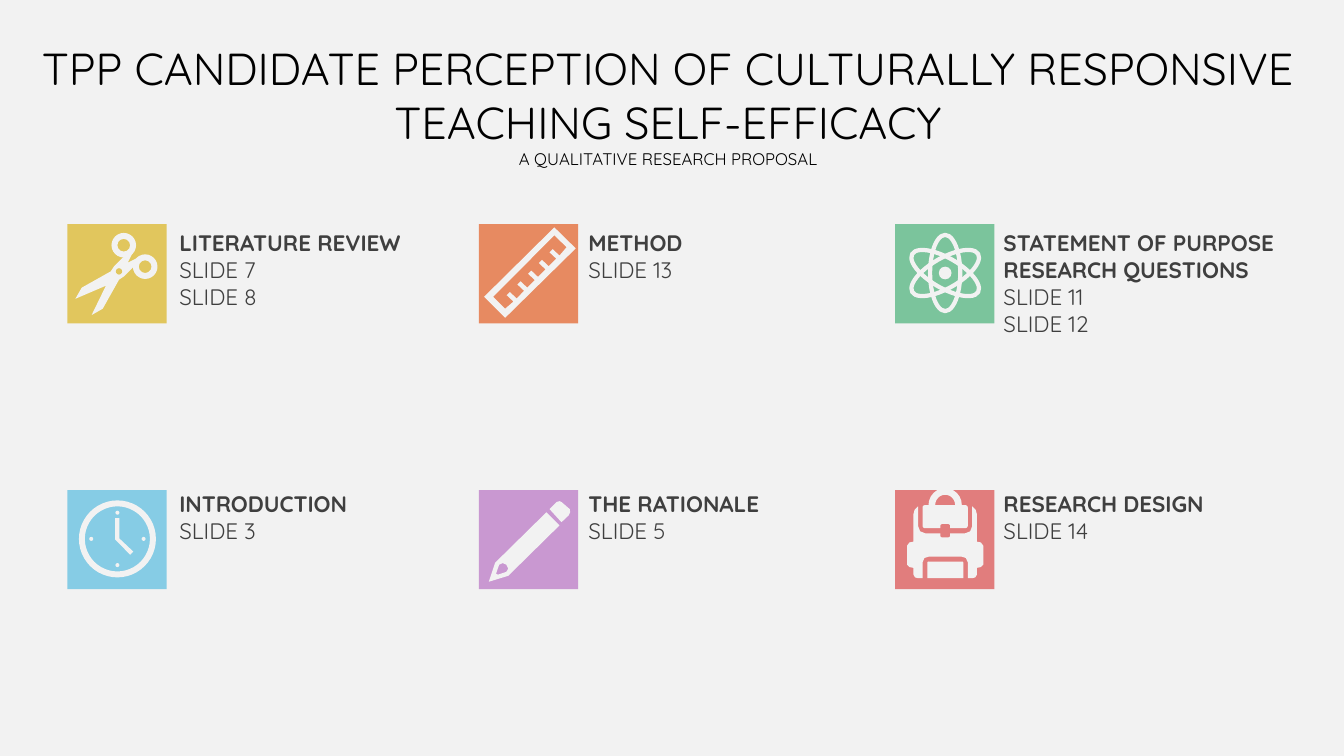
from dataclasses import dataclass
from typing import Any

from pptx import Presentation
from pptx.dml.color import RGBColor
from pptx.enum.shapes import MSO_SHAPE
from pptx.enum.text import MSO_ANCHOR, MSO_AUTO_SIZE, PP_ALIGN
from pptx.util import Cm, Pt

OVAL = MSO_SHAPE.OVAL
DONUT = MSO_SHAPE.DONUT
SQUARE = MSO_SHAPE.RECTANGLE
ROUNDED = MSO_SHAPE.ROUNDED_RECTANGLE
ARCH = MSO_SHAPE.BLOCK_ARC
POCKET = MSO_SHAPE.ROUND_2_SAME_RECTANGLE
CENTER = PP_ALIGN.CENTER
LEFT = PP_ALIGN.LEFT
TOP = MSO_ANCHOR.TOP
NO_FIT = MSO_AUTO_SIZE.NONE

FONT = "Quicksand"
COLOURS = {
    "paper": "F2F2F2", "title": "000000", "text": "3F3F3F",
    "yellow": "E1C65D", "orange": "E78A61", "green": "7BC49C",
    "blue": "86CCE5", "purple": "C998D1", "red": "E17D7D",
}
TILE_SIZE = 2.5
TILE_LEFTS = (1.7, 12.07, 22.56)
TILE_TOPS = (5.65, 12.35)
TEXT_LEFTS = (4.27, 14.58, 25.04)
TEXT_TOPS = (5.65, 12.22)


def rgb(name):
    return RGBColor.from_string(COLOURS[name])


def paint(shape, colour):
    shape.shadow.inherit = False
    shape.fill.solid()
    shape.fill.fore_color.rgb = rgb(colour)
    shape.line.fill.background()


@dataclass
class Tile:
    shapes: Any
    left: float
    top: float
    colour: str

    def preset(self, kind, x, y, width, height, colour="paper"):
        shape = self.shapes.add_shape(
            kind, Cm(self.left + x), Cm(self.top + y), Cm(width), Cm(height))
        paint(shape, colour)
        return shape

    def circle(self, x, y, radius, colour="paper", kind=OVAL):
        return self.preset(kind, x - radius, y - radius, 2 * radius, 2 * radius, colour)

    def ring(self, x, y, radius, thickness):
        self.circle(x, y, radius, kind=DONUT).adjustments[0] = thickness / (2 * radius)

    def outline(self, *contours):
        placed = [[(Cm(self.left + x), Cm(self.top + y)) for x, y in contour]
                  for contour in contours]
        builder = self.shapes.build_freeform(*placed[0][0])
        builder.add_line_segments(placed[0][1:])
        for hole in placed[1:]:
            builder.move_to(*hole[0])
            builder.add_line_segments(hole[1:])
        paint(builder.convert_to_shape(), "paper")


def draw_scissors(tile):
    tile.outline([
        (1.4, 0.84), (1.17, 1.07), (1.09, 1.19), (0.36, 1.6), (0.2, 1.88),
        (0.97, 1.55), (0.61, 2.29), (0.89, 2.13), (1.3, 1.4), (1.42, 1.32),
        (1.65, 1.09), (1.78, 0.84), (1.52, 0.97), (1.65, 0.71)])
    for x, y in ((1.42, 0.53), (1.96, 1.07)):
        tile.ring(x, y, 0.31, 0.15)
    tile.circle(1.3, 1.19, 0.08, tile.colour)


def draw_ruler(tile):
    marks = [(2.03 - 0.27 * mark + dx, 0.79 + 0.27 * mark + dy)
             for mark in range(5)
             for dx, dy in ((0, 0), (-0.17, -0.16), (-0.25, -0.08), (-0.08, 0.08))]
    tile.outline(
        [(1.9, 0.08), (0.13, 1.83), (0.66, 2.36), (2.44, 0.61)],
        [(1.9, 0.28), (2.21, 0.58), *marks, (0.66, 2.13), (0.36, 1.83)])


def draw_atom(tile):
    for angle in (0, 60, -60):
        orbit = tile.preset(OVAL, 0.88, 0.27, 0.76, 1.92)
        orbit.rotation = angle
        orbit.fill.background()
        orbit.line.color.rgb = rgb("paper")
        orbit.line.width = Pt(3)
    tile.circle(1.26, 1.23, 0.16)


def draw_clock(tile):
    x, y, reach = 1.26, 1.23, 0.66
    tile.ring(x, y, 0.97, 0.15)
    tile.outline([(1.2, 0.71), (1.2, 1.24), (1.58, 1.63),
                  (1.66, 1.55), (1.31, 1.22), (1.31, 0.71)])
    for dx, dy in ((0, -1), (0, 1), (-1, 0), (1, 0)):
        tile.circle(x + reach * dx, y + reach * dy, 0.05)


def draw_pencil(tile):
    tile.outline(
        [(1.7, 0.56), (0.41, 1.83), (0.25, 2.31), (0.74, 2.16), (2.03, 0.89)],
        [(0.51, 1.88), (0.6, 1.84), (0.69, 1.88), (0.74, 1.98),
         (0.69, 2.06), (0.48, 2.13), (0.43, 2.11)])
    tile.outline([(2.03, 0.28), (1.96, 0.3), (1.78, 0.48), (2.08, 0.81),
                  (2.26, 0.64), (2.3, 0.56), (2.29, 0.48), (2.08, 0.3)])


def draw_backpack(tile):
    left_half = [
        (0.76, 1.09), (0.63, 1.04), (0.58, 0.91), (0.58, 0.41), (0.49, 0.5),
        (0.46, 0.61), (0.46, 1.3), (0.36, 1.32), (0.3, 1.4), (0.3, 1.88),
        (0.36, 1.94), (0.46, 1.96), (0.46, 2.13), (0.5, 2.2), (0.58, 2.22),
        (0.69, 2.22), (0.69, 1.82), (0.74, 1.71), (0.84, 1.68)]
    right_half = [(2.52 - x, y) for x, y in reversed(left_half)]
    tile.outline(left_half + right_half)
    tile.preset(ARCH, 0.84, -0.05, 0.84, 0.86).adjustments[2] = 0.2
    tile.preset(ROUNDED, 0.69, 0.38, 1.14, 0.58).adjustments[0] = 0.1
    tile.preset(ROUNDED, 1.14, 0.86, 0.24, 0.33, tile.colour)
    tile.preset(POCKET, 0.81, 1.8, 0.91, 0.42).adjustments[0] = 0.08


SECTIONS = (
    (("yellow", draw_scissors, ["LITERATURE REVIEW"], ["SLIDE 7", "SLIDE 8"]),
     ("orange", draw_ruler, ["METHOD"], ["SLIDE 13"]),
     ("green", draw_atom, ["STATEMENT OF PURPOSE", "RESEARCH QUESTIONS"],
      ["SLIDE 11", "SLIDE 12"])),
    (("blue", draw_clock, ["INTRODUCTION"], ["SLIDE 3"]),
     ("purple", draw_pencil, ["THE RATIONALE"], ["SLIDE 5"]),
     ("red", draw_backpack, ["RESEARCH DESIGN"], ["SLIDE 14"])),
)


def write_lines(frame, lines, colour, align):
    frame.word_wrap = True
    frame.auto_size = NO_FIT
    frame.vertical_anchor = TOP
    for index, (text, size, bold) in enumerate(lines):
        paragraph = frame.add_paragraph() if index else frame.paragraphs[0]
        paragraph.text = text
        paragraph.alignment = align
        paragraph.font.name = FONT
        paragraph.font.size = Pt(size)
        paragraph.font.bold = bold
        paragraph.font.color.rgb = rgb(colour)


def add_heading(slide):
    title = slide.shapes.title
    title.left, title.top, title.width, title.height = Cm(0.71), Cm(0.91), Cm(32.26), Cm(1.63)
    write_lines(title.text_frame, [
        ("TPP CANDIDATE PERCEPTION OF CULTURALLY RESPONSIVE TEACHING SELF-EFFICACY", 32, False),
        ("A QUALITATIVE RESEARCH PROPOSAL", 12, False)], "title", CENTER)


def add_icon(slide, left, top, colour, draw):
    tile = Tile(slide.shapes.add_group_shape().shapes, left, top, colour)
    tile.preset(SQUARE, 0, 0, TILE_SIZE, TILE_SIZE, colour)
    draw(tile)


def add_entry(slide, left, top, topics, pages):
    entry = slide.shapes.add_textbox(Cm(left), Cm(top), Cm(7.85), Cm(4.37))
    lines = [(topic, 16, True) for topic in topics] + [(page, 16, False) for page in pages]
    write_lines(entry.text_frame, lines, "text", LEFT)


def main():
    deck = Presentation()
    deck.slide_width, deck.slide_height = Cm(33.87), Cm(19.05)
    slide = deck.slides.add_slide(deck.slide_layouts.get_by_name("Title Only"))
    slide.background.fill.solid()
    slide.background.fill.fore_color.rgb = rgb("paper")
    add_heading(slide)
    for row, tile_top, text_top in zip(SECTIONS, TILE_TOPS, TEXT_TOPS):
        for section, tile_left, text_left in zip(row, TILE_LEFTS, TEXT_LEFTS):
            colour, draw, topics, pages = section
            add_icon(slide, tile_left, tile_top, colour, draw)
            add_entry(slide, text_left, text_top, topics, pages)
    deck.save("out.pptx")


if __name__ == "__main__":
    main()
